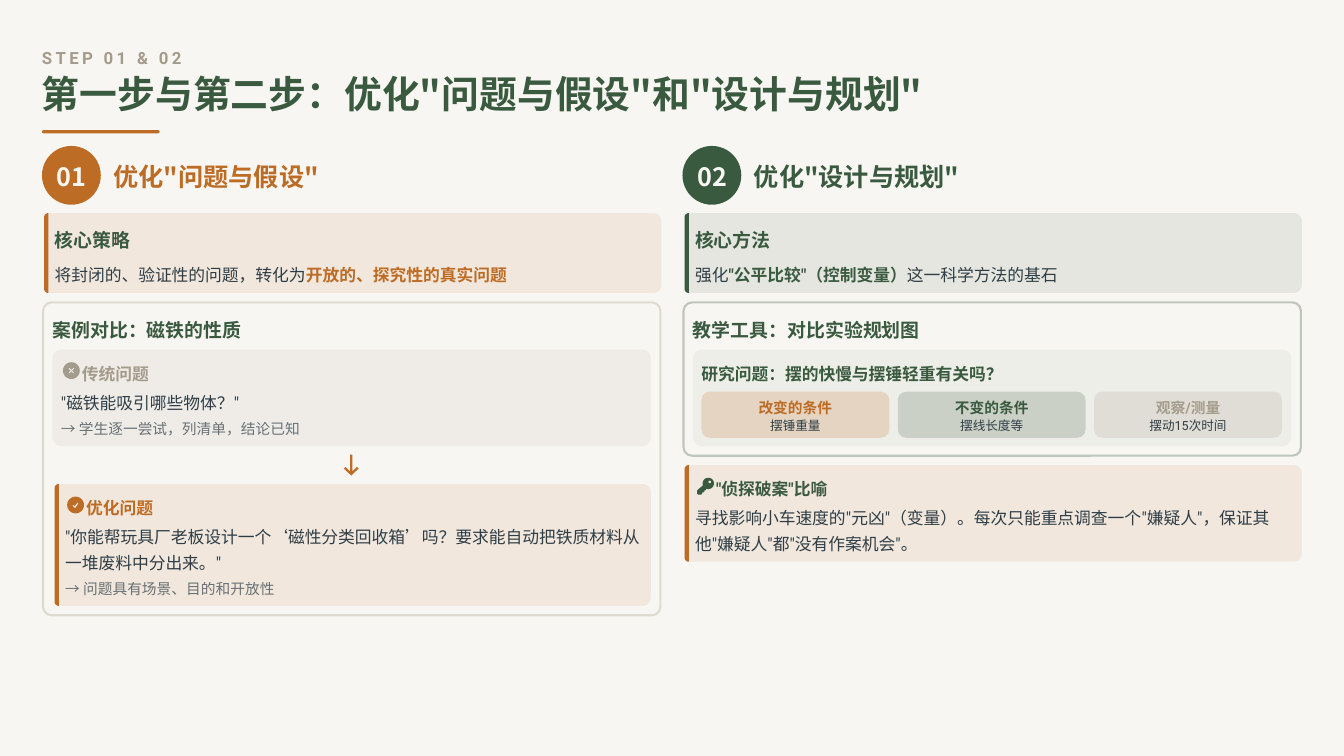
from math import cos, radians, sin

from lxml.etree import SubElement
from pptx import Presentation
from pptx.dml.color import RGBColor
from pptx.enum.shapes import MSO_SHAPE
from pptx.enum.text import MSO_ANCHOR, MSO_AUTO_SIZE, PP_ALIGN
from pptx.oxml.ns import qn
from pptx.util import Pt

PX = 12700
ORANGE, GREEN, SAND = "BC6C25", "3A5A40", "A39B8B"
INK, PAPER = "2F3E46", "F8F6F2"
CJK, LATIN = "Noto Sans CJK SC", "Roboto"
LEFT, RIGHT = 40, 650


def paint(fill, tint):
    """Fill with a colour such as "BC6C25" or, at 10 % opacity, "BC6C25@10"."""
    code, _, alpha = tint.partition("@")
    fill.solid()
    fill.fore_color.rgb = RGBColor.from_string(code)
    if alpha:
        clr = fill._xPr.find(qn("a:solidFill"))[0]
        SubElement(clr, qn("a:alpha"), val=str(int(alpha) * 1000))


def finish(shape, tint, edge=None):
    shape.shadow.inherit = False
    paint(shape.fill, tint)
    if edge:
        paint(shape.line.fill, edge)
        shape.line.width = Pt(2)
    else:
        shape.line.fill.background()


def place(shape, x, y, w, h):
    shape.left, shape.top, shape.width, shape.height = (v * PX for v in (x, y, w, h))


def write(shape, runs, size, lead, font=LATIN, align=PP_ALIGN.LEFT, gap=0):
    """Write (words, colour, bold) runs into a box without insets."""
    frame = shape.text_frame
    frame.word_wrap = True
    frame.auto_size = MSO_AUTO_SIZE.NONE
    frame.vertical_anchor = MSO_ANCHOR.MIDDLE
    frame.margin_left = frame.margin_right = 0
    frame.margin_top = frame.margin_bottom = 0
    para = frame.paragraphs[0]
    para.alignment = align
    para.line_spacing = lead
    for words, tint, bold in runs:
        run = para.add_run()
        run.text = words
        run.font.size = Pt(size)
        run.font.bold = bold
        run.font.name = font
        paint(run.font.fill, tint)
        props = run.font._element
        SubElement(props, qn("a:ea"), typeface=CJK)
        if gap:
            props.set("spc", str(gap))


def label(slide, box, runs, size=16, lead=1.3, **style):
    shape = slide.shapes.add_textbox(*(v * PX for v in box))
    write(shape, runs, size, lead, **style)


def panel(slide, box, tint, edge=None):
    shape = slide.shapes.add_shape(MSO_SHAPE.ROUNDED_RECTANGLE, *(v * PX for v in box))
    shape.adjustments[0] = 8 / min(box[2:])
    finish(shape, tint, edge)


def arc(cx, cy, r, start=0, end=360):
    steps = 24
    turns = [radians(start + (end - start) * i / steps) for i in range(steps + 1)]
    return [(cx + r * cos(t), cy + r * sin(t)) for t in turns]


def trace(slide, x, y, tint, *loops):
    """Draw closed loops of px points from (x, y); inner loops are holes."""
    loops = [[(a * 100, b * 100) for a, b in loop] for loop in loops]
    pen = slide.shapes.build_freeform(*loops[0][0], scale=PX / 100)
    for i, loop in enumerate(loops):
        if i:
            pen.move_to(*loop[0])
        pen.add_line_segments(loop[1:], close=True)
    finish(pen.convert_to_shape(x * PX, y * PX), tint)


def card(slide, x, y, w, h, tint):
    """Pale card with a solid strip down its left edge."""
    start = arc(4, h - 4, 4, 90, 180) + arc(4, 4, 4, 180, 270)
    end = arc(w - 8, 8, 8, 270, 360) + arc(w - 8, h - 8, 8, 0, 90)
    trace(slide, x, y, tint + "@10", start + end)
    trace(slide, x, y, tint, start)


def cross(slide, x, y):
    mark = [(5.2, 6), (6, 5.2), (8, 7.2), (10, 5.2), (10.8, 6), (8.8, 8),
            (10.8, 10), (10, 10.8), (8, 8.8), (6, 10.8), (5.2, 10), (7.2, 8)]
    trace(slide, x, y, SAND, arc(8, 8, 8), mark)


def check(slide, x, y):
    mark = [(10.9, 6.2), (8, 10.7), (7, 10.9), (5, 8.5), (5.8, 7.6), (7.3, 9), (9.8, 5.5)]
    trace(slide, x, y, ORANGE, arc(8, 8, 8), mark)


def key(slide, x, y):
    shaft = [(0.3, 11.7), (0, 12.4), (0, 15.2), (0.8, 16), (4, 16), (4.8, 15.2),
             (4.8, 14), (6, 14), (6.8, 13.2), (6.8, 12), (8, 12)]
    trace(slide, x, y, GREEN, arc(10.6, 5.4, 5.4, 110, -200) + shaft, arc(12, 4, 1.3))


def arrow(slide, x, y):
    trace(slide, x, y, ORANGE, [
        (6.5, 0), (8.5, 0), (8.5, 16), (13, 11.8), (14.6, 13.2),
        (7.5, 20), (0.4, 13.2), (2, 11.8), (6.5, 16)])


def column(slide, x, tint, num, head, topic, core, height, edge, title):
    """Numbered heading, core card and the framed area below it."""
    disc = slide.shapes.add_shape(MSO_SHAPE.OVAL, x * PX, 139 * PX, 56 * PX, 56 * PX)
    finish(disc, tint)
    label(slide, (x + 14, 151, 40, 32), [(num, PAPER, True)], 24, 1.1, font=CJK)
    label(slide, (x + 68, 151, 200, 32), [(head, tint, True)], 24, 1.1, font=CJK)
    card(slide, x + 2, 203, 588, 76, tint)
    label(slide, (x + 12, 211, 579, 28), [(topic, GREEN, True)], 18)
    label(slide, (x + 12, 247, 578, 24), core)
    panel(slide, (x + 1, 288, 588, height), PAPER, edge + "@30")
    label(slide, (x + 10, 297, 579, 28), [(title, GREEN, True)], 18)


def sample(slide, x, y, tint, head, quote, note, rows=1):
    """Case text: heading beside its icon, the question and a remark."""
    low = y + 28 + 24 * rows + 4
    label(slide, (x + 20, y, 538, 24), [(head, tint, True)])
    label(slide, (x, y + 28, 558, 24 * rows), [(quote, INK, False)])
    if note:
        label(slide, (x, low, 557, 20), [(note, INK + "@70", False)], 14, 1.2)


def header(slide):
    label(slide, (LEFT, 40, 1208, 24), [("STEP 01 & 02", SAND, True)], gap=320)
    title = slide.shapes.title
    place(title, LEFT, 72, 1218, 40)
    words = '第一步与第二步：优化"问题与假设"和"设计与规划"'
    write(title, [(words, GREEN, True)], 36, 0.9, font=CJK)
    bar = slide.shapes.add_shape(
        MSO_SHAPE.ROUNDED_RECTANGLE, LEFT * PX, 124 * PX, 112 * PX, 3 * PX)
    bar.adjustments[0] = 0.5
    finish(bar, ORANGE)


def cases(slide):
    column(slide, LEFT, ORANGE, "01", '优化"问题与假设"', "核心策略",
           [("将封闭的、验证性的问题，转化为", INK, False),
            ("开放的、探究性的真实问题", ORANGE, True)],
           298, SAND, "案例对比：磁铁的性质")
    panel(slide, (50, 333, 570, 92), SAND + "@10")
    cross(slide, 60, 345)
    sample(slide, 58, 341, SAND, "传统问题", '"磁铁能吸引哪些物体？"',
           "→ 学生逐一尝试，列清单，结论已知")
    arrow(slide, 327, 433)
    card(slide, 52, 461, 568, 116, ORANGE)
    check(slide, 64, 473)
    sample(slide, 62, 469, ORANGE, "优化问题",
           '"你能帮玩具厂老板设计一个‘磁性分类回收箱’吗？要求能自动把铁质材料从一堆废料中分出来。"',
           "→ 问题具有场景、目的和开放性", rows=2)


def tools(slide):
    column(slide, RIGHT, GREEN, "02", '优化"设计与规划"', "核心方法",
           [("强化", INK, False), ('"公平比较"（控制变量）', GREEN, True),
            ("这一科学方法的基石", INK, False)],
           146, GREEN, "教学工具：对比实验规划图")
    panel(slide, (660, 333, 570, 92), GREEN + "@5")
    label(slide, (668, 341, 562, 24), [("研究问题：摆的快慢与摆锤轻重有关吗？", GREEN, True)])
    terms = [("改变的条件", "摆锤重量", ORANGE), ("不变的条件", "摆线长度等", GREEN),
             ("观察/测量", "摆动15次时间", SAND)]
    for i, (term, value, tint) in enumerate(terms):
        x = 668 + 187 * i
        panel(slide, (x, 373, 179, 44), tint + "@20")
        label(slide, (x, 377, 179, 20), [(term, tint, True)], 14, 1.2, align=PP_ALIGN.CENTER)
        label(slide, (x, 397, 179, 16), [(value, INK, False)], 12, 1.1, align=PP_ALIGN.CENTER)
    card(slide, 652, 443, 588, 92, ORANGE)
    key(slide, 664, 455)
    label(slide, (682, 451, 558, 24), [('"侦探破案"比喻', GREEN, True)])
    story = ('寻找影响小车速度的"元凶"（变量）。每次只能重点调查一个"嫌疑人"，'
             '保证其他"嫌疑人"都"没有作案机会"。')
    label(slide, (662, 479, 578, 48), [(story, INK, False)])


def main():
    deck = Presentation()
    deck.slide_width, deck.slide_height = 1280 * PX, 720 * PX
    slide = deck.slides.add_slide(deck.slide_layouts[5])
    paint(slide.background.fill, PAPER)
    header(slide)
    cases(slide)
    tools(slide)
    deck.save("out.pptx")


if __name__ == "__main__":
    main()
